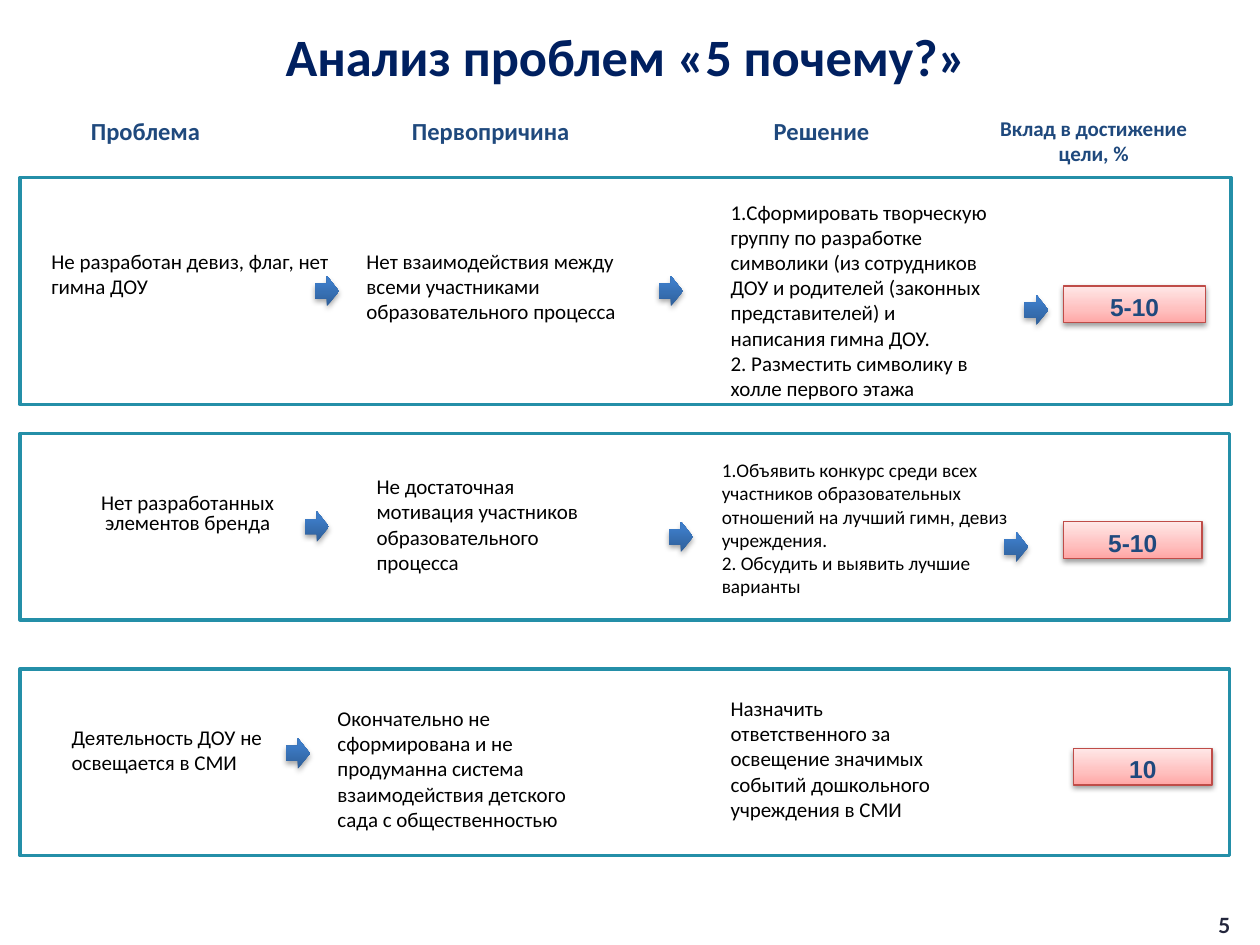
import pptx
import pptx.util
import pptx.dml.color
import pptx.enum.shapes
import pptx.enum.text
import pptx.oxml
import pptx.oxml.ns
from pptx.util import Inches

COLORS = {
    "title": "002060", "heading": "1F497D", "body": "000000",
    "page": "23263C", "frame": "248FA8", "badge_line": "BF4C48",
}
GRADIENTS = {
    "arrow": [(0, "2F5F99"), (80, "3D7CC7"), (100, "3A7CCB")],
    "badge": [(0, "FFA6A5"), (35, "FFC0BF"), (100, "FFE7E7")],
}
FORMATS = {
    "title": {"name": "Calibri", "size": 30, "bold": True},
    "heading": {"name": "Calibri", "size": 14, "bold": True},
    "body": {"name": "Calibri", "size": 12, "bold": False},
    "badge": {"name": "Arial", "size": 14, "bold": True},
    "page": {"name": "Lato", "size": 12, "bold": True},
}
SHAPE = pptx.enum.shapes.MSO_SHAPE
ALIGN = pptx.enum.text.PP_ALIGN
ANCHOR = pptx.enum.text.MSO_ANCHOR
TIGHT = (0.1, 0.09, 0.1, 0.01)
NORMAL = (0.1, 0.05, 0.1, 0.05)


def rgb(name):
    return pptx.dml.color.RGBColor.from_string(COLORS[name])


def element(xml):
    """Make an element from markup that lacks its opening bracket."""
    tag, rest = xml.split(" ", 1)
    return pptx.oxml.parse_xml(f"<{tag} {pptx.oxml.ns.nsdecls('a')} {rest}")


class Deck:
    def __init__(self):
        self.prs = pptx.Presentation()
        self.prs.slide_width, self.prs.slide_height = Inches(10), Inches(7.5)
        self.s = self.prs.slides.add_slide(self.prs.slide_layouts[5])

    def fill_text(self, sp, lines, style, color, size=None, align=ALIGN.LEFT,
                  anchor=ANCHOR.TOP, insets=NORMAL, spacing=1.0):
        """Fill a shape with paragraphs; several paragraphs are numbered."""
        tf = sp.text_frame
        sides = ("margin_left", "margin_top", "margin_right", "margin_bottom")
        frame = {"word_wrap": True, "vertical_anchor": anchor,
                 "auto_size": pptx.enum.text.MSO_AUTO_SIZE.NONE}
        frame.update(zip(sides, map(Inches, insets)))
        for key, value in frame.items():
            setattr(tf, key, value)
        values = dict(FORMATS[style])
        values["size"] = pptx.util.Pt(size or values["size"])
        for i, line in enumerate(lines):
            p = tf.paragraphs[0] if i == 0 else tf.add_paragraph()
            p.alignment, p.line_spacing = align, spacing
            if len(lines) > 1:
                p._p.get_or_add_pPr().append(
                    element('a:buAutoNum type="arabicPeriod"/>'
                            .replace("a:", "a:", 1)))
            r = p.add_run()
            r.text = line
            for key, value in values.items():
                setattr(r.font, key, value)
            r.font.color.rgb = rgb(color)

    def title(self, text, box):
        sp = self.s.shapes.title
        sp.left, sp.top, sp.width, sp.height = map(Inches, box)
        self.fill_text(sp, [text], "title", "title", align=ALIGN.CENTER,
                       anchor=ANCHOR.MIDDLE)

    def text(self, lines, box, style="body", color="body", **options):
        sp = self.s.shapes.add_textbox(*map(Inches, box))
        self.fill_text(sp, lines, style, color, **options)

    def shape(self, kind, box, line=None, width=0):
        sp = self.s.shapes.add_shape(kind, *map(Inches, box))
        sp.shadow.inherit = False
        if line:
            sp.line.color.rgb = rgb(line)
            sp.line.width = pptx.util.Pt(width)
        else:
            sp.line.fill.background()
        return sp

    def raise_shape(self, sp, gradient, alpha, distance):
        """Give a shape an upward gradient and a soft shadow below."""
        sp.fill.gradient()
        sp.fill.gradient_angle = 90
        spPr = sp._element.spPr
        stops = spPr.find(".//" + pptx.oxml.ns.qn("a:gsLst"))
        for stop in list(stops):
            stops.remove(stop)
        for position, color in GRADIENTS[gradient]:
            stops.append(element(f'a:gs pos="{position * 1000}">'
                                 f'<a:srgbClr val="{color}"/></a:gs>'))
        spPr.find(pptx.oxml.ns.qn("a:effectLst")).append(element(
            f'a:outerShdw blurRad="40000" dist="{distance}" dir="5400000" '
            f'rotWithShape="0"><a:srgbClr val="000000">'
            f'<a:alpha val="{alpha * 1000}"/></a:srgbClr></a:outerShdw>'))

    def frame(self, box):
        self.shape(SHAPE.RECTANGLE, box, "frame", 2).fill.background()

    def arrow(self, left, top):
        sp = self.shape(SHAPE.RIGHT_ARROW, (left, top, 0.19, 0.24))
        self.raise_shape(sp, "arrow", 35, 23000)

    def badge(self, text, left, top, width=1.1):
        sp = self.shape(SHAPE.RECTANGLE, (left, top, width, 0.29),
                        "badge_line", 0.75)
        self.raise_shape(sp, "badge", 38, 20000)
        self.fill_text(sp, [text], "badge", "heading", align=ALIGN.CENTER,
                       anchor=ANCHOR.MIDDLE, insets=TIGHT, spacing=0.8)


HEADINGS = [
    ("Проблема", (0.24, 0.87, 1.83, 0.3), 14),
    ("Первопричина", (2.98, 0.87, 1.83, 0.3), 14),
    ("Решение", (5.65, 0.87, 1.74, 0.3), 14),
    ("Вклад в достижение цели, %", (7.69, 0.87, 1.98, 0.47), 12),
]
ROWS = [
    {"frame": (0.16, 1.41, 9.61, 1.8),
     "texts": [
         (["Не разработан девиз, флаг, нет гимна ДОУ"],
          (0.31, 1.88, 2.4, 0.71), {"insets": TIGHT}),
         (["Нет взаимодействия между всеми участниками образовательного "
           "процесса"], (2.81, 1.88, 2.2, 0.71), {"insets": TIGHT}),
         (["Сформировать творческую группу по разработке символики (из "
           "сотрудников ДОУ и родителей (законных представителей) и "
           "написания гимна ДОУ.",
           " Разместить символику в холле первого этажа"],
          (5.7, 1.49, 2.28, 1.72), {"insets": TIGHT})],
     "arrows": [(2.5, 2.19), (5.23, 2.19), (8.13, 2.34)],
     "badge": ("5-10", 8.44, 2.27, 1.13)},
    {"frame": (0.16, 3.44, 9.6, 1.48),
     "texts": [
         (["Нет разработанных элементов бренда"], (0.39, 3.83, 2.2, 0.43),
          {"insets": TIGHT, "align": ALIGN.CENTER, "spacing": 0.8}),
         (["Не достаточная мотивация участников образовательного процесса"],
          (2.89, 3.67, 2.05, 0.91), {"insets": TIGHT}),
         (["Объявить конкурс среди всех участников образовательных "
           "отношений на лучший гимн, девиз учреждения.",
           " Обсудить и выявить лучшие варианты"],
          (5.63, 3.59, 2.58, 1.21), {"size": 11})],
     "arrows": [(2.42, 4.06), (5.31, 4.14), (7.97, 4.22)],
     "badge": ("5-10", 8.44, 4.14)},
    {"frame": (0.16, 5.31, 9.6, 1.48),
     "texts": [
         (["Деятельность ДОУ не освещается в СМИ"],
          (0.47, 5.7, 1.72, 0.5), {}),
         (["Окончательно не сформирована и не продуманна система "
           "взаимодействия детского сада с общественностью"],
          (2.58, 5.55, 2.34, 1.11), {}),
         (["Назначить ответственного за освещение значимых событий "
           "дошкольного учреждения в СМИ"], (5.7, 5.47, 1.8, 1.11), {})],
     "arrows": [(2.27, 5.86)],
     "badge": ("10", 8.52, 5.94)},
]


def main():
    deck = Deck()
    deck.title("Анализ проблем «5 почему?»", (0.22, 0.21, 9.5, 0.46))
    for text, box, size in HEADINGS:
        deck.text([text], box, "heading", "heading", size=size,
                  align=ALIGN.CENTER, insets=(0.1, 0.05, 0.1, 0.01))
    for row in ROWS:
        deck.frame(row["frame"])
        for lines, box, options in row["texts"]:
            deck.text(lines, box, **options)
        for left, top in row["arrows"]:
            deck.arrow(left, top)
        deck.badge(*row["badge"])
    deck.text(["5"], (9.47, 7.19, 0.49, 0.31), "page", "page",
              align=ALIGN.CENTER, anchor=ANCHOR.MIDDLE)
    deck.prs.save("out.pptx")


if __name__ == "__main__":
    main()
